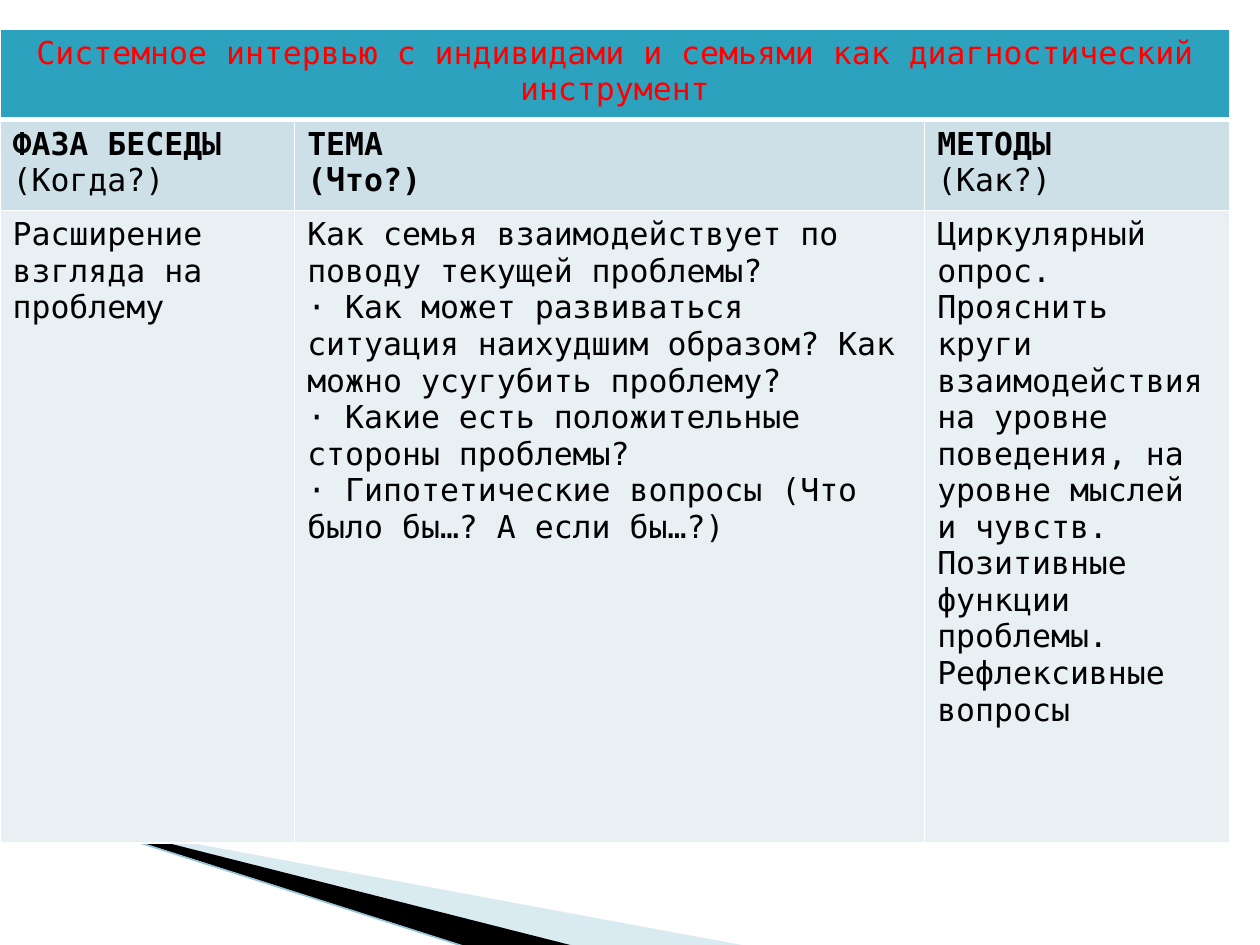
from lxml.etree import SubElement
from pptx import Presentation
from pptx.dml.color import RGBColor
from pptx.enum.shapes import MSO_CONNECTOR as Connector
from pptx.enum.text import PP_ALIGN as Align
from pptx.oxml import parse_xml
from pptx.oxml.ns import nsdecls, qn
from pptx.util import Cm, Pt

TITLE = "Системное интервью с индивидами и семьями как диагностический инструмент"
PHASE = "Расширение взгляда на проблему"
TOPICS = (
    "Как семья взаимодействует по поводу текущей проблемы?\u00a0\n"
    "· Как может развиваться ситуация наихудшим образом? "
    "Как можно усугубить проблему?\u00a0\n"
    "· Какие есть положительные стороны проблемы?\u00a0\n"
    "· Гипотетические вопросы (Что было бы…? А если бы…?)"
)
METHODS = (
    "Циркулярный опрос. Прояснить круги взаимодействия на уровне поведения, "
    "на уровне мыслей и чувств. Позитивные функции проблемы. "
    "Рефлексивные вопросы"
)
HEADINGS = [
    [[("ФАЗА БЕСЕДЫ\n", True), ("(Когда?)", False)]],
    [[("ТЕМА", True)], [("(Что?)", True)]],
    [[("МЕТОДЫ\n", True), ("(Как?)", False)]],
]
ANSWERS = [[[(answer, False)]] for answer in (PHASE, TOPICS, METHODS)]
COLUMN_WIDTHS = (5.94, 12.7, 6.15)
ROW_HEIGHTS = (1.83, 1.83, 12.75)
PALE_WEDGE = [(1.4, 16.54), (15.11, 19.08), (11.58, 19.08), (1.4, 16.51)]
BLACK_WEDGE = [(1.35, 16.48), (11.61, 19.08), (9.45, 19.1), (1.37, 16.51)]


def rgb(code):
    """Turn a hex string into a colour."""
    return RGBColor.from_string(code)


def paint(target, code):
    """Give a shape or cell a solid fill."""
    target.fill.solid()
    target.fill.fore_color.rgb = rgb(code)


def add_wedge(slide, corners, code, opacity=100):
    """Draw a filled wedge without outline."""
    start, *others = [(Cm(x), Cm(y)) for x, y in corners]
    builder = slide.shapes.build_freeform(*start)
    builder.add_line_segments(others)
    wedge = builder.convert_to_shape()
    wedge.shadow.inherit = False
    wedge.line.fill.background()
    paint(wedge, code)
    if opacity < 100:
        tint = wedge.fill._xPr.find(".//" + qn("a:srgbClr"))
        SubElement(tint, qn("a:alpha"), val=str(opacity * 1000))


def add_edge(slide, start, end, code):
    """Draw the thin edge line along the wedges."""
    edge = slide.shapes.add_connector(
        Connector.STRAIGHT, *(Cm(length) for length in (*start, *end))
    )
    edge.line.color.rgb = rgb(code)
    edge.line.width = Pt(0.95)
    SubElement(edge._element.spPr, qn("a:effectLst"))


def set_borders(cell, bottom=1):
    """Give a cell white borders on all sides."""
    properties = cell._tc.get_or_add_tcPr()
    widths = {"lnL": 1, "lnR": 1, "lnT": 1, "lnB": bottom}
    for position, (side, width) in enumerate(widths.items()):
        border = parse_xml(
            f'<a:{side} {nsdecls("a")} w="{Pt(width)}"><a:solidFill>'
            f'<a:srgbClr val="FFFFFF"/></a:solidFill></a:{side}>'
        )
        properties.insert(position, border)


def write_run(paragraph, text, bold, code):
    """Write text in the table font, breaking lines at newlines."""
    formats = {"name": "DejaVu Sans Mono", "size": Pt(18), "bold": bold}
    for number, line in enumerate(text.split("\n")):
        if number:
            paragraph.add_line_break()
        if line:
            run = paragraph.add_run()
            run.text = line
            for attribute, value in formats.items():
                setattr(run.font, attribute, value)
            run.font.color.rgb = rgb(code)


def fill_cell(cell, paragraphs, fill, ink="000000", align=Align.LEFT, bottom=1):
    """Fill a cell with paragraphs of (text, bold) runs."""
    paint(cell, fill)
    set_borders(cell, bottom)
    frame = cell.text_frame
    for number, runs in enumerate(paragraphs):
        paragraph = frame.add_paragraph() if number else frame.paragraphs[0]
        paragraph.alignment = align
        for text, bold in runs:
            write_run(paragraph, text, bold, ink)


def add_interview_table(slide):
    """Add the table of phases, topics and methods."""
    table = slide.shapes.add_table(
        len(ROW_HEIGHTS), len(COLUMN_WIDTHS), Cm(0), Cm(0.58),
        Cm(sum(COLUMN_WIDTHS)), Cm(sum(ROW_HEIGHTS)),
    ).table
    for flag in ("first_row", "horz_banding"):
        setattr(table, flag, False)
    for column, width in zip(table.columns, COLUMN_WIDTHS):
        column.width = Cm(width)
    for row, height in zip(table.rows, ROW_HEIGHTS):
        row.height = Cm(height)

    title = table.cell(0, 0)
    title.merge(table.cell(0, len(COLUMN_WIDTHS) - 1))
    fill_cell(title, [[(TITLE, False)]], "2DA2BF", "FF0000", Align.CENTER, 3)
    bands = ((HEADINGS, "CDE0E8"), (ANSWERS, "E8F0F4"))
    for row, (contents, fill) in enumerate(bands, start=1):
        for column, paragraphs in enumerate(contents):
            fill_cell(table.cell(row, column), paragraphs, fill)


def main():
    """Build and save the slide."""
    deck = Presentation()
    deck.slide_width, deck.slide_height = Cm(25.4), Cm(19.05)
    slide = deck.slides.add_slide(deck.slide_layouts[6])
    add_wedge(slide, PALE_WEDGE, "A0CBDC", opacity=40)
    add_wedge(slide, BLACK_WEDGE, "000000")
    add_edge(slide, (-0.03, 16.08), (9.42, 19.1), "97C5D8")
    add_interview_table(slide)
    deck.save("out.pptx")


if __name__ == "__main__":
    main()
